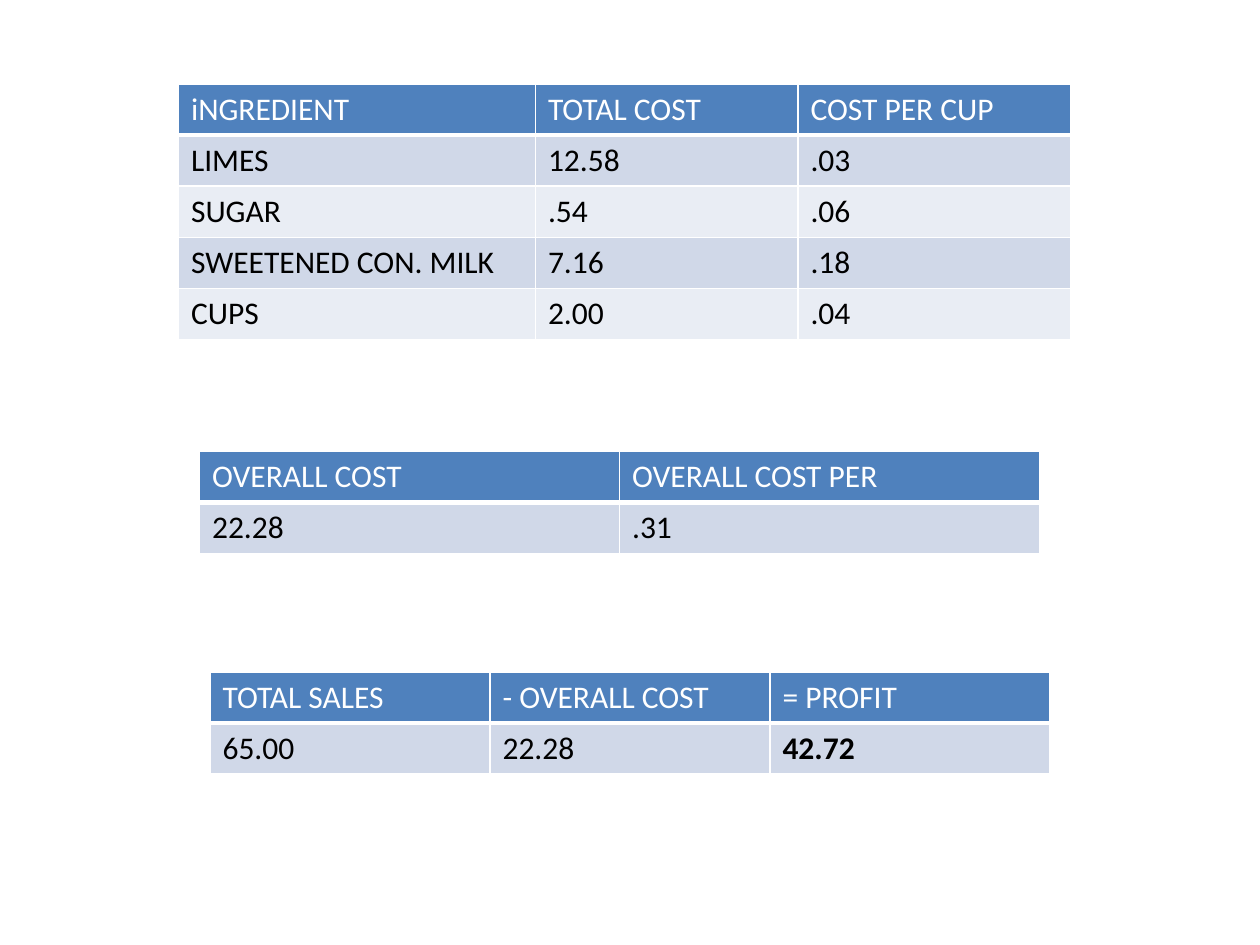
from dataclasses import dataclass

from lxml.etree import SubElement
from pptx import Presentation
from pptx.dml.color import RGBColor as RGB
from pptx.oxml.ns import qn
from pptx.util import Inches, Pt


@dataclass(frozen=True)
class Theme:
    font: str = "Calibri"
    size: int = 18
    header: str = "4F81BD"
    header_text: str = "FFFFFF"
    bands: tuple = ("D0D8E8", "E9EDF4")
    body_text: str = "000000"
    rule: str = "FFFFFF"
    thin: int = 1
    thick: int = 3


THEME = Theme()

# Grid: 120 columns by 90 rows across the slide
WIDTH, HEIGHT = Inches(10), Inches(7.5)
COL, ROW = WIDTH / 120, HEIGHT / 90
TABLE_ROW = 4.87

INGREDIENTS = [
    ["iNGREDIENT", "TOTAL COST", "COST PER CUP"],
    ["LIMES", "12.58", ".03"],
    ["SUGAR", ".54", ".06"],
    ["SWEETENED CON. MILK", "7.16", ".18"],
    ["CUPS", "2.00", ".04"],
]
OVERALL = [["OVERALL COST", "OVERALL COST PER"], ["22.28", ".31"]]
PROFIT = [["TOTAL SALES", "- OVERALL COST", "= PROFIT"],
          ["65.00", "22.28", "42.72"]]


def set_borders(cell, bottom):
    """Rule all four sides of a cell; only the bottom width varies."""
    tc_pr = cell._tc.get_or_add_tcPr()
    widths = {"lnL": THEME.thin, "lnR": THEME.thin,
              "lnT": THEME.thin, "lnB": bottom}
    for side, width in widths.items():
        ln = SubElement(tc_pr, qn(f"a:{side}"), w=str(Pt(width)))
        fill = SubElement(ln, qn("a:solidFill"))
        SubElement(fill, qn("a:srgbClr"), val=THEME.rule)


def fill_cell(cell, text, row, bold):
    is_header = row == 0
    set_borders(cell, THEME.thick if is_header else THEME.thin)
    cell.fill.solid()
    band = THEME.bands[(row - 1) % len(THEME.bands)]
    cell.fill.fore_color.rgb = RGB.from_string(
        THEME.header if is_header else band)

    r = cell.text_frame.paragraphs[0].add_run()
    r.text = text
    for name, value in {"name": THEME.font, "size": Pt(THEME.size),
                        "bold": bold}.items():
        setattr(r.font, name, value)
    r.font.color.rgb = RGB.from_string(
        THEME.header_text if is_header else THEME.body_text)


def add_cost_table(slide, left, top, columns, data, bold_cell=None):
    """Place a table at a grid position, with column widths in grid columns."""
    table = slide.shapes.add_table(
        len(data), len(columns), round(left * COL), round(top * ROW),
        round(sum(columns) * COL), round(len(data) * TABLE_ROW * ROW)).table
    for column, width in zip(table.columns, columns):
        column.width = round(width * COL)
    for i, values in enumerate(data):
        for j, text in enumerate(values):
            fill_cell(table.cell(i, j), text, i, (i, j) == bold_cell)


def main():
    prs = Presentation()
    prs.slide_width, prs.slide_height = WIDTH, HEIGHT
    slide = prs.slides.add_slide(prs.slide_layouts.get_by_name("Blank"))

    # Cost of each ingredient
    add_cost_table(slide, 17, 8, [34, 25, 26], INGREDIENTS)
    # Overall cost
    add_cost_table(slide, 19, 43, [80 / 2] * 2, OVERALL)
    # Profit, with the result in bold
    add_cost_table(slide, 20, 64, [80 / 3] * 3, PROFIT, bold_cell=(1, 2))

    prs.save("out.pptx")


if __name__ == "__main__":
    main()
